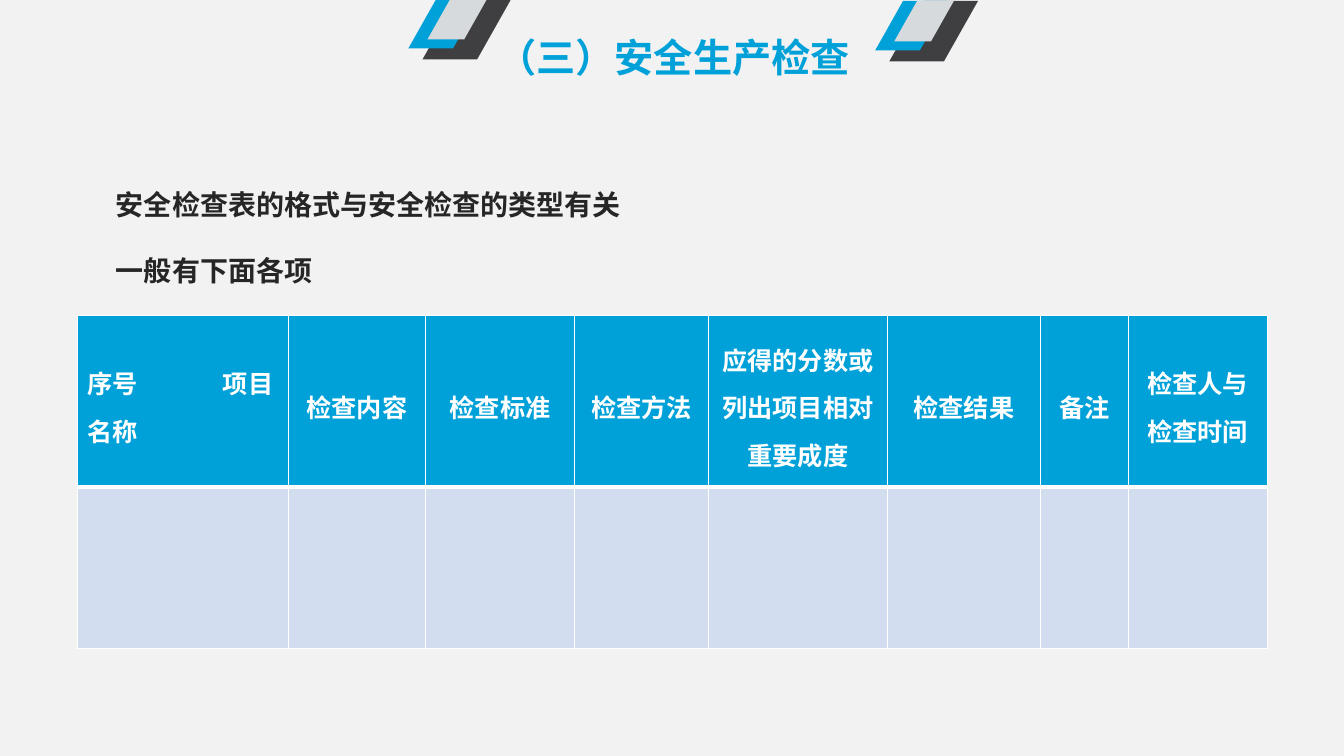
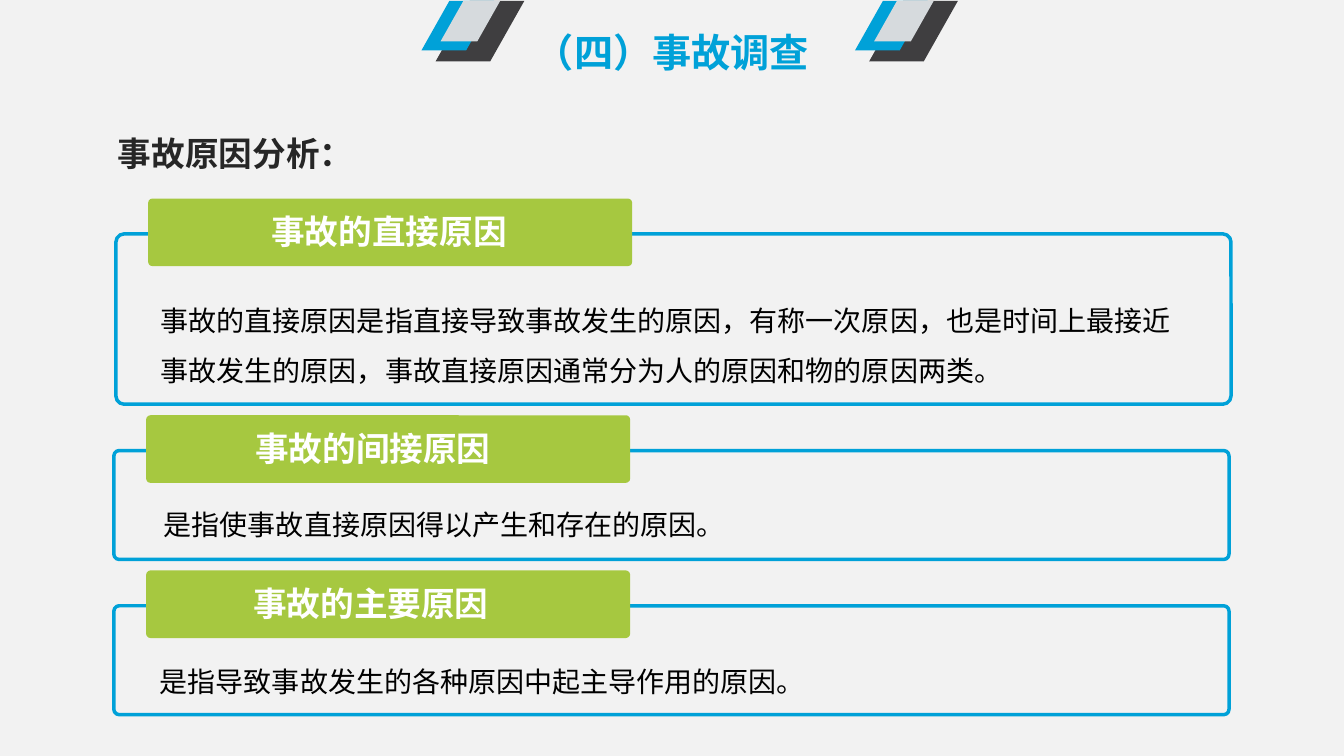
from lxml import etree
from pptx import Presentation
from pptx.dml.color import RGBColor
from pptx.enum import shapes, text
from pptx.oxml import ns
from pptx.util import Inches, Pt

# Shared style
FONT, TABLE_FONT = "Noto Sans CJK SC", "Calibri"
PAPER, BLUE, GREEN, INK = "F2F2F2", "00A1D8", "A6C840", "262626"
WHITE, BLACK, ROW_TINT = "FFFFFF", "000000", "D2DEEF"
EMBLEM = [  # left offset, width, height, colour
    (0.14, 0.88, 0.6, "3F3E40"),
    (0, 0.72, 0.49, BLUE),
    (0.19, 0.59, 0.4, "D6DADD"),
]
TITLE_STYLE = dict(size=28, colour=BLUE, bold=True, align="CENTER")

# Content
CHECK = {
    "title": "（三）安全生产检查",
    "title_box": (4.81, 0.28, 3.74, 0.57),
    "emblems": [(4.05, -0.01), (8.68, 0.01)],
    "lead": ["安全检查表的格式与安全检查的类型有关", "一般有下面各项"],
    "lead_box": (1.05, 1.81, 6.3, 1.2),
    "lead_style": dict(size=20, colour=INK, bold=True, after=23),
}
COLUMNS = [
    ("序号\t项目名称", 2.09),
    ("检查内容", 1.36),
    ("检查标准", 1.48),
    ("检查方法", 1.33),
    ("应得的分数或列出项目相对重要成度", 1.77),
    ("检查结果", 1.52),
    ("备注", 0.87),
    ("检查人与检查时间", 1.38),
]
ROW_HEIGHTS = [1.7, 1.6]

ACCIDENT = {
    "title": "（四）事故调查",
    "title_box": (5.19, 0.23, 2.95, 0.57),
    "emblems": [(4.18, 0.01), (8.48, 0.01)],
    "lead": ["事故原因分析："],
    "lead_box": (1.07, 1.27, 2.71, 0.5),
    "lead_style": dict(size=24, colour=INK, bold=True),
}
CAUSES = [
    dict(label="事故的直接原因", label_indent=1.21, left=1.15, height=1.69,
         text="事故的直接原因是指直接导致事故发生的原因，有称一次原因，也是时间上最接近"
              "事故发生的原因，事故直接原因通常分为人的原因和物的原因两类。",
         insets=(0.42, 0.5, 0.37, 0), spacing=1.5),
    dict(label="事故的间接原因", label_indent=1.07, left=1.13, height=1.08,
         text="是指使事故直接原因得以产生和存在的原因。",
         insets=(0.48, 0.47, 0.3, 0), spacing=1.25),
    dict(label="事故的主要原因", label_indent=1.05, left=1.13, height=1.08,
         text="是指导致事故发生的各种原因中起主导作用的原因。",
         insets=(0.44, 0.48, 0.3, 0), spacing=1.25),
]


def rgb(colour):
    return RGBColor.from_string(colour)


def box(values):
    return [Inches(value) for value in values]


def write(frame, lines, size, colour, bold=False, align="LEFT", font=FONT,
          spacing=1.0, after=0, anchor="TOP", insets=(0.1, 0.05, 0.1, 0.05), wrap=True):
    settings = dict(zip(("margin_left", "margin_top", "margin_right", "margin_bottom"),
                        box(insets)))
    settings.update(word_wrap=wrap, auto_size=text.MSO_AUTO_SIZE.NONE,
                    vertical_anchor=text.MSO_ANCHOR[anchor])
    for key, value in settings.items():
        setattr(frame, key, value)
    for number, line in enumerate(lines):
        paragraph = frame.paragraphs[0] if number == 0 else frame.add_paragraph()
        formats = dict(alignment=text.PP_ALIGN[align], line_spacing=spacing,
                       space_before=Pt(0), space_after=Pt(after))
        for key, value in formats.items():
            setattr(paragraph, key, value)
        run = paragraph.add_run()
        run.text = line
        for key, value in dict(size=Pt(size), bold=bold, name=font).items():
            setattr(run.font, key, value)
        run.font.color.rgb = rgb(colour)
        latin = run._r.get_or_add_rPr().find(ns.qn("a:latin"))
        east_asian = etree.Element(ns.qn("a:ea"), typeface=FONT)
        latin.addnext(east_asian)


def place(shape, position):
    for key, value in zip(("left", "top", "width", "height"), box(position)):
        setattr(shape, key, value)


def add_block(parent, kind, position, adjustment, fill=None, line=None):
    block = parent.add_shape(shapes.MSO_SHAPE[kind], *box(position))
    block.shadow.inherit = False
    block.adjustments[0] = adjustment
    if fill:
        block.fill.solid()
        block.fill.fore_color.rgb = rgb(fill)
    else:
        block.fill.background()
    if line:
        block.line.color.rgb = rgb(line)
        block.line.width = Pt(2.5)
    else:
        block.line.fill.background()
    return block


def start_slide(prs, content):
    slide = prs.slides.add_slide(prs.slide_layouts[1])
    title, lead = slide.placeholders
    place(title, content["title_box"])
    write(title.text_frame, [content["title"]], wrap=False, **TITLE_STYLE)
    place(lead, content["lead_box"])
    write(lead.text_frame, content["lead"], **content["lead_style"])
    # Plain lines instead of the template's bullets
    for paragraph in lead.text_frame.paragraphs:
        properties = paragraph._p.get_or_add_pPr()
        properties.set("marL", "0")
        properties.set("indent", "0")
        etree.SubElement(properties, ns.qn("a:buNone"))
    for left, top in content["emblems"]:
        emblem = slide.shapes.add_group_shape()
        for offset, width, height, colour in EMBLEM:
            add_block(emblem.shapes, "PARALLELOGRAM",
                      (left + offset, top, width, height), 0.564, fill=colour)
    return slide


def set_borders(cell, widths):
    properties = cell._tc.get_or_add_tcPr()
    for index, (side, width) in enumerate(zip("LRTB", widths)):
        line = etree.Element(ns.qn(f"a:ln{side}"), w=str(Pt(width)))
        fill = etree.SubElement(line, ns.qn("a:solidFill"))
        etree.SubElement(fill, ns.qn("a:srgbClr"), val=WHITE)
        properties.insert(index, line)


def add_checklist(slide):
    widths = [width for _, width in COLUMNS]
    table = slide.shapes.add_table(
        len(ROW_HEIGHTS), len(COLUMNS),
        *box((0.77, 3.13, sum(widths), sum(ROW_HEIGHTS)))).table
    for row, height in zip(table.rows, ROW_HEIGHTS):
        row.height = Inches(height)
    for index, (heading, width) in enumerate(COLUMNS):
        table.columns[index].width = Inches(width)
        head, blank = table.cell(0, index), table.cell(1, index)
        for cell, fill, borders in ((head, BLUE, (1, 1, 1, 3)),
                                    (blank, ROW_TINT, (1, 1, 3, 1))):
            cell.fill.solid()
            cell.fill.fore_color.rgb = rgb(fill)
            set_borders(cell, borders)
        split = "\t" in heading
        write(head.text_frame, [heading], 18, WHITE, bold=True, font=TABLE_FONT,
              align="LEFT" if split else "CENTER", spacing=1.3)
        head.vertical_anchor = text.MSO_ANCHOR.MIDDLE
        if split:
            properties = head.text_frame.paragraphs[0]._p.get_or_add_pPr()
            stops = etree.SubElement(properties, ns.qn("a:tabLst"))
            etree.SubElement(stops, ns.qn("a:tab"), pos=str(Inches(1.34)), algn="l")


def add_causes(slide):
    top = 2.32
    for cause in CAUSES:
        left, height = cause["left"], cause["height"]
        panel = add_block(slide.shapes, "ROUNDED_RECTANGLE",
                          (left, top, 11.06, height), 0.048, line=BLUE)
        write(panel.text_frame, [cause["text"]], 20, BLACK,
              spacing=cause["spacing"], insets=cause["insets"])
        label = add_block(slide.shapes, "ROUNDED_RECTANGLE",
                          (left + 0.32, top - 0.35, 4.8, 0.67), 0.062, fill=GREEN)
        write(label.text_frame, [cause["label"]], 24, WHITE, bold=True,
              anchor="MIDDLE", insets=(cause["label_indent"], 0, 0, 0.02))
        top += height + 0.46


def main():
    prs = Presentation()
    prs.slide_width, prs.slide_height = box((13.33, 7.5))
    background = prs.slide_master.background.fill
    background.solid()
    background.fore_color.rgb = rgb(PAPER)
    add_checklist(start_slide(prs, CHECK))
    add_causes(start_slide(prs, ACCIDENT))
    prs.save("out.pptx")


if __name__ == "__main__":
    main()
